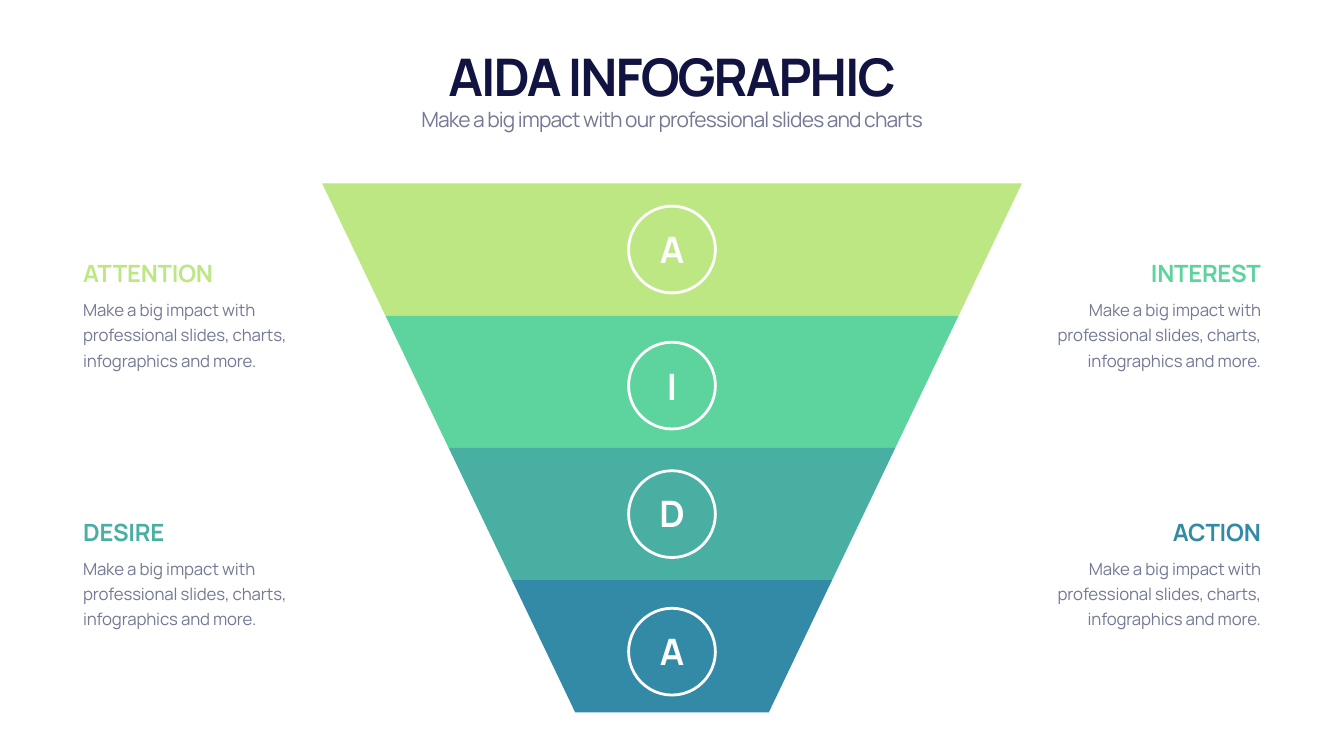
from dataclasses import dataclass

from pptx import Presentation
from pptx.dml.color import RGBColor
from pptx.enum.shapes import MSO_SHAPE
from pptx.enum.text import MSO_ANCHOR, PP_ALIGN
from pptx.util import Pt

FONT = "Manrope"
NAVY, GREY, WHITE = "111340", "747994", "FFFFFF"
LIME, GREEN, TEAL, BLUE = "BCE783", "5DD39E", "49AFA3", "338AA7"

PAGE_WIDTH, PAGE_HEIGHT = 1919.52, 1080
CENTER = PAGE_WIDTH / 2
FUNNEL_TOP, LAYER_HEIGHT = 262, 188.9
TOP_HALF_WIDTH, HALF_WIDTH_STEP = 499.7, 90.35
CIRCLE_SIZE = 124
LETTER_WIDTH, LETTER_HEIGHT = 87, 70.6
NOTE_WIDTH = 324
LEFT_NOTE, RIGHT_NOTE = 111.6, 1483.9
UPPER_NOTE, LOWER_NOTE = 365.8, 735.1
NOTE_TEXT = "Make a big impact with professional slides, charts, infographics and more."


@dataclass(frozen=True)
class Layer:
    letter: str
    color: str
    circle_top: float
    letter_top: float


@dataclass(frozen=True)
class Note:
    heading: str
    color: str
    left: float
    top: float
    align: PP_ALIGN


@dataclass(frozen=True)
class Style:
    size: float
    color: str
    spacing: float
    bold: bool = False
    align: PP_ALIGN = PP_ALIGN.CENTER
    anchor: MSO_ANCHOR = MSO_ANCHOR.TOP
    line_height: float | None = None


LAYERS = [
    Layer("A", LIME, 294.5, 320.4),
    Layer("I", GREEN, 488.9, 516.2),
    Layer("D", TEAL, 672.5, 697.7),
    Layer("A", BLUE, 869, 895),
]
NOTES = [
    Note("ATTENTION", LIME, LEFT_NOTE, UPPER_NOTE, PP_ALIGN.LEFT),
    Note("INTEREST", GREEN, RIGHT_NOTE, UPPER_NOTE, PP_ALIGN.RIGHT),
    Note("DESIRE", TEAL, LEFT_NOTE, LOWER_NOTE, PP_ALIGN.LEFT),
    Note("ACTION", BLUE, RIGHT_NOTE, LOWER_NOTE, PP_ALIGN.RIGHT),
]


def paint(target, color: str) -> None:
    target.rgb = RGBColor.from_string(color)


def add_text(page, text: str, left: float, top: float, width: float,
             height: float, style: Style) -> None:
    box = page.shapes.add_textbox(Pt(left), Pt(top), Pt(width), Pt(height))
    frame = box.text_frame
    frame.word_wrap = True
    frame.vertical_anchor = style.anchor
    para = frame.paragraphs[0]
    para.alignment = style.align
    if style.line_height:
        para.line_spacing = Pt(style.line_height)
    para.font.name = FONT
    para.font.size = Pt(style.size)
    para.font.bold = style.bold
    paint(para.font.color, style.color)
    span = para.add_run()
    span.text = text
    span._r.get_or_add_rPr().set("spc", str(round(style.spacing * 100)))


def add_band(page, index: int, layer: Layer) -> None:
    top = FUNNEL_TOP + index * LAYER_HEIGHT
    bottom = top + LAYER_HEIGHT
    upper = TOP_HALF_WIDTH - index * HALF_WIDTH_STEP
    lower = upper - HALF_WIDTH_STEP
    builder = page.shapes.build_freeform(Pt(CENTER - upper), Pt(top))
    builder.add_line_segments([
        (Pt(CENTER + upper), Pt(top)),
        (Pt(CENTER + lower), Pt(bottom)),
        (Pt(CENTER - lower), Pt(bottom)),
    ])
    band = builder.convert_to_shape()
    band.shadow.inherit = False
    band.fill.solid()
    paint(band.fill.fore_color, layer.color)
    band.line.fill.background()


def add_badge(page, layer: Layer) -> None:
    circle = page.shapes.add_shape(
        MSO_SHAPE.OVAL, Pt(CENTER - CIRCLE_SIZE / 2), Pt(layer.circle_top),
        Pt(CIRCLE_SIZE), Pt(CIRCLE_SIZE))
    circle.shadow.inherit = False
    circle.fill.background()
    circle.line.width = Pt(4)
    paint(circle.line.color, WHITE)
    add_text(page, layer.letter, CENTER - LETTER_WIDTH / 2, layer.letter_top,
             LETTER_WIDTH, LETTER_HEIGHT,
             Style(52, WHITE, -0.3, bold=True, anchor=MSO_ANCHOR.MIDDLE))


def add_note(page, note: Note) -> None:
    add_text(page, note.heading, note.left, note.top, NOTE_WIDTH, 48.2,
             Style(34, note.color, -0.3, bold=True, align=note.align,
                   anchor=MSO_ANCHOR.BOTTOM))
    add_text(page, NOTE_TEXT, note.left, note.top + 51.8, NOTE_WIDTH, 114.5,
             Style(24, GREY, -0.2, align=note.align, line_height=36))


def main() -> None:
    deck = Presentation()
    deck.slide_width, deck.slide_height = Pt(PAGE_WIDTH), Pt(PAGE_HEIGHT)
    page = deck.slides.add_slide(deck.slide_layouts[6])
    for index, layer in enumerate(LAYERS):
        add_band(page, index, layer)
    for layer in LAYERS:
        add_badge(page, layer)
    add_text(page, "AIDA INFOGRAPHIC", 119.8, 59, 1680, 97.2,
             Style(74, NAVY, -2.9, bold=True, anchor=MSO_ANCHOR.BOTTOM))
    add_text(page, "Make a big impact with our professional slides and charts",
             119.8, 149, 1680, 43.9, Style(30, GREY, -1.2))
    for note in NOTES:
        add_note(page, note)
    deck.save("out.pptx")


if __name__ == "__main__":
    main()
